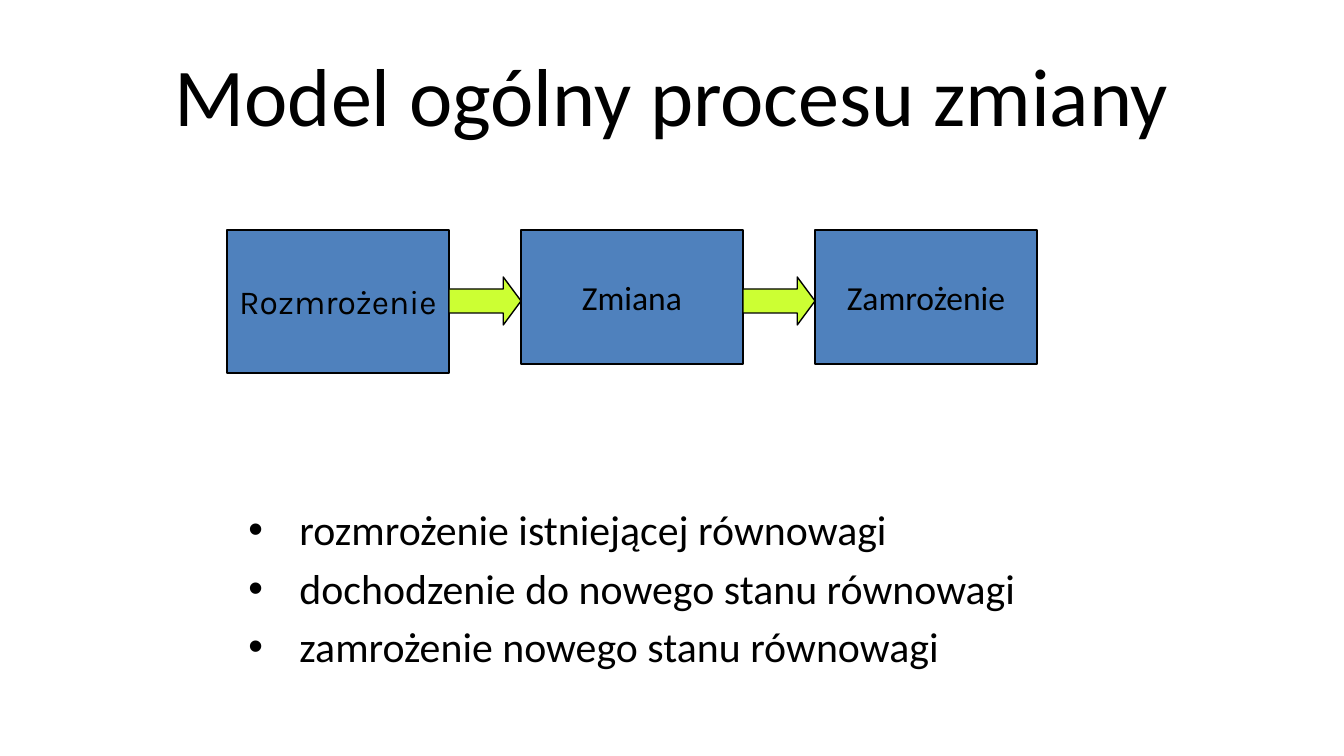
"""Build a slide showing the three-stage model of change."""
from lxml.etree import SubElement
from pptx import Presentation
from pptx.dml.color import RGBColor
from pptx.enum.shapes import MSO_SHAPE
from pptx.enum.text import MSO_ANCHOR, MSO_AUTO_SIZE, PP_ALIGN
from pptx.oxml.ns import qn
from pptx.util import Pt

TITLE = "Model ogólny procesu zmiany"
STAGES = [
    ("Rozmrożenie", "Karla", 143),
    ("Zmiana", "Calibri", 134),
    ("Zamrożenie", "Calibri", 134),
]
POINTS = [
    "rozmrożenie istniejącej równowagi",
    "dochodzenie do nowego stanu równowagi",
    "zamrożenie nowego stanu równowagi",
]

BLACK = RGBColor(0x00, 0x00, 0x00)
BLUE = RGBColor(0x4F, 0x81, 0xBD)
LIME = RGBColor(0xCC, 0xFF, 0x33)

SCALE = 914400 / 134.4
STAGE_LEFT, STAGE_TOP, STAGE_WIDTH, GAP = 227, 230, 222, 72
ARROW_TOP, ARROW_HEIGHT = 277, 48
LIST_INSET, LIST_INDENT = 359, 51


def px(length):
    """Turn px into EMU."""
    return round(length * SCALE)


def place(shape, left, top, width, height):
    """Set the position and size of a shape in px."""
    shape.left, shape.top = px(left), px(top)
    shape.width, shape.height = px(width), px(height)


def style(paragraph, size, name="Calibri"):
    """Format the runs of a paragraph."""
    for span in paragraph.runs:
        span.font.size = Pt(size)
        span.font.name = name
        span.font.color.rgb = BLACK


def add_block(page, kind, color, left, top, width, height):
    """Add a filled shape with a thin black outline."""
    block = page.shapes.add_shape(kind, px(left), px(top), px(width), px(height))
    block.shadow.inherit = False
    block.fill.solid()
    block.fill.fore_color.rgb = color
    block.line.color.rgb = BLACK
    block.line.width = Pt(0.75)
    return block


def add_title(page):
    """Fill the title placeholder."""
    title = page.shapes.title
    place(title, 67, 31, 1210, 126)
    frame = title.text_frame
    frame.text = TITLE
    frame.auto_size = MSO_AUTO_SIZE.NONE
    frame.vertical_anchor = MSO_ANCHOR.MIDDLE
    frame.paragraphs[0].alignment = PP_ALIGN.CENTER
    style(frame.paragraphs[0], 44)


def add_points(page):
    """Fill the body placeholder with the bulleted list."""
    body = page.placeholders[1]
    place(body, 235, 145, 899, 496)
    frame = body.text_frame
    frame.text = "\n".join(POINTS)
    frame.auto_size = MSO_AUTO_SIZE.NONE
    frame.vertical_anchor = MSO_ANCHOR.TOP
    frame.margin_top = px(LIST_INSET)
    for index, paragraph in enumerate(frame.paragraphs):
        paragraph.space_before = Pt(4.5 if index else 0)
        properties = paragraph._p.get_or_add_pPr()
        properties.set("marL", str(px(LIST_INDENT)))
        properties.set("indent", str(-px(LIST_INDENT)))
        SubElement(properties, qn("a:buFont")).set("typeface", "Arial")
        SubElement(properties, qn("a:buChar")).set("char", "•")
        style(paragraph, 22.4)


def add_stages(page):
    """Draw the stages in a row, with an arrow in each gap."""
    for index, (label, font_name, height) in enumerate(STAGES):
        left = STAGE_LEFT + index * (STAGE_WIDTH + GAP)
        box = add_block(page, MSO_SHAPE.RECTANGLE, BLUE,
                        left, STAGE_TOP, STAGE_WIDTH, height)
        frame = box.text_frame
        frame.text = label
        frame.word_wrap = False
        frame.vertical_anchor = MSO_ANCHOR.MIDDLE
        frame.paragraphs[0].alignment = PP_ALIGN.CENTER
        style(frame.paragraphs[0], 18, font_name)
        if index:
            arrow = add_block(page, MSO_SHAPE.RIGHT_ARROW, LIME,
                              left - GAP, ARROW_TOP, GAP, ARROW_HEIGHT)
            arrow.adjustments[0] = 0.5
            arrow.adjustments[1] = 0.37


def main():
    """Build and save the deck."""
    deck = Presentation()
    deck.slide_width, deck.slide_height = px(1344), px(756)
    page = deck.slides.add_slide(deck.slide_layouts[1])
    add_title(page)
    add_points(page)
    add_stages(page)
    deck.save("out.pptx")


if __name__ == "__main__":
    main()
